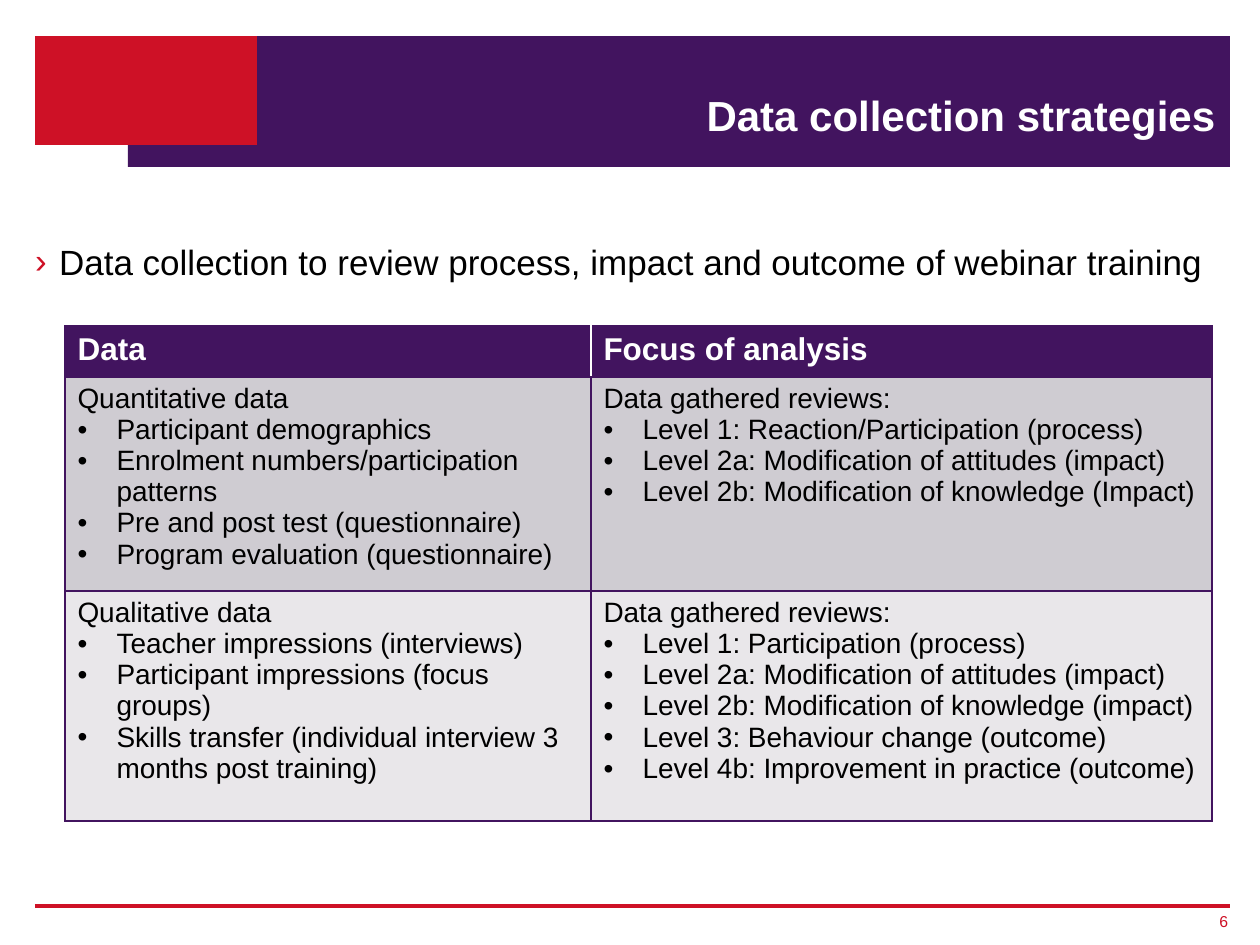
from dataclasses import dataclass

from lxml.etree import SubElement
from pptx import Presentation
from pptx.dml.color import RGBColor
from pptx.enum.shapes import MSO_CONNECTOR as Connector, MSO_SHAPE as Shape
from pptx.enum.text import MSO_ANCHOR as Anchor, PP_ALIGN as Align
from pptx.oxml.ns import qn
from pptx.util import Emu, Pt

EMU_PER_PX = 914400 / 126


def px(length):
    return Emu(round(length * EMU_PER_PX))


def assign(target, values):
    for key, value in values.items():
        setattr(target, key, value)


@dataclass(frozen=True)
class Theme:
    font: str = "Arial"
    purple: str = "42145F"
    red: str = "CE1126"
    white: str = "FFFFFF"
    black: str = "000000"
    bands: tuple = ("CFCCD2", "E9E7EA")
    title: int = 24
    lead: int = 20
    header: int = 18
    cell: int = 16
    number: int = 9


class SlideBuilder:
    def __init__(self, slide, theme):
        self.slide = slide
        self.theme = theme

    def add_text(self, paragraph, text, size, color, bold=False, **layout):
        assign(paragraph, layout)
        run = paragraph.add_run()
        run.text = text
        assign(run.font, {"name": self.theme.font, "size": Pt(size), "bold": bold})
        run.font.color.rgb = RGBColor.from_string(color)

    def bullet(self, paragraph, mark, indent, color=None):
        props = paragraph._p.get_or_add_pPr()
        props.set("marL", str(px(indent)))
        props.set("indent", str(-px(indent)))
        if color:
            SubElement(SubElement(props, qn("a:buClr")), qn("a:srgbClr"), val=color)
        SubElement(props, qn("a:buFont"), typeface=self.theme.font)
        SubElement(props, qn("a:buChar"), char=mark)

    def block(self, box, color):
        shape = self.slide.shapes.add_shape(Shape.RECTANGLE, *map(px, box))
        shape.shadow.inherit = False
        shape.fill.solid()
        shape.fill.fore_color.rgb = RGBColor.from_string(color)
        shape.line.fill.background()

    def rule(self, start, end, color, width):
        line = self.slide.shapes.add_connector(Connector.STRAIGHT, *map(px, start + end))
        line.line.color.rgb = RGBColor.from_string(color)
        line.line.width = Pt(width)
        SubElement(line._element.spPr, qn("a:effectLst"))

    def title(self, box, text):
        heading = self.slide.shapes.title
        # Bring the heading in front of the banner
        self.slide.shapes.element.append(heading.element)
        assign(heading, dict(zip(("left", "top", "width", "height"), map(px, box))))
        assign(heading.text_frame, {"vertical_anchor": Anchor.BOTTOM, "word_wrap": True})
        self.add_text(heading.text_frame.paragraphs[0], text, self.theme.title,
                      self.theme.white, True, alignment=Align.RIGHT, line_spacing=Pt(25))

    def text_frame(self, box, **frame_format):
        frame = self.slide.shapes.add_textbox(*map(px, box)).text_frame
        assign(frame, {"word_wrap": True, "margin_left": 0, **frame_format})
        return frame

    def lead(self, box, text):
        paragraph = self.text_frame(box).paragraphs[0]
        self.bullet(paragraph, "›", 24, self.theme.red)
        self.add_text(paragraph, text, self.theme.lead, self.theme.black,
                      space_after=Pt(5))

    def slide_number(self, box, text):
        frame = self.text_frame(box, margin_right=0, margin_top=0, margin_bottom=0,
                                vertical_anchor=Anchor.MIDDLE)
        self.add_text(frame.paragraphs[0], text, self.theme.number, self.theme.red,
                      alignment=Align.RIGHT)

    def cell_style(self, cell, fill, borders):
        props = cell._tc.get_or_add_tcPr()
        for side in "LRTB":
            line = SubElement(props, qn(f"a:ln{side}"), w=str(Pt(1)))
            paint = SubElement(line, qn("a:solidFill"))
            SubElement(paint, qn("a:srgbClr"), val=borders.get(side, self.theme.purple))
        cell.fill.solid()
        cell.fill.fore_color.rgb = RGBColor.from_string(fill)

    def table(self, origin, widths, heights, headers, rows):
        theme = self.theme
        size = (sum(widths), sum(heights))
        table = self.slide.shapes.add_table(
            len(heights), len(widths), *map(px, origin + size)).table
        for column, width in zip(table.columns, widths):
            column.width = px(width)
        for row, height in zip(table.rows, heights):
            row.height = px(height)

        # Header row with a white divider
        for index, (header, inner) in enumerate(zip(headers, "RL")):
            cell = table.cell(0, index)
            self.cell_style(cell, theme.purple, {inner: theme.white})
            self.add_text(cell.text_frame.paragraphs[0], header, theme.header,
                          theme.white, True)

        # Each body cell: an introduction, then bulleted items
        for r, (row, band) in enumerate(zip(rows, theme.bands), 1):
            for c, (intro, *items) in enumerate(row):
                cell = table.cell(r, c)
                self.cell_style(cell, band, {})
                frame = cell.text_frame
                self.add_text(frame.paragraphs[0], intro, theme.cell, theme.black)
                for item in items:
                    paragraph = frame.add_paragraph()
                    self.bullet(paragraph, "•", 39)
                    self.add_text(paragraph, item, theme.cell, theme.black)


HEADERS = ("Data", "Focus of analysis")
STRATEGIES = (
    (
        ("Quantitative data",
         "Participant demographics",
         "Enrolment numbers/participation patterns",
         "Pre and post test (questionnaire)",
         "Program evaluation (questionnaire)"),
        ("Data gathered reviews:",
         "Level 1: Reaction/Participation (process)",
         "Level 2a: Modification of attitudes (impact)",
         "Level 2b: Modification of knowledge (Impact)"),
    ),
    (
        ("Qualitative data",
         "Teacher impressions (interviews)",
         "Participant impressions (focus groups)",
         "Skills transfer (individual interview 3 months post training)"),
        ("Data gathered reviews:",
         "Level 1: Participation (process)",
         "Level 2a: Modification of attitudes (impact)",
         "Level 2b: Modification of knowledge (impact)",
         "Level 3: Behaviour change (outcome)",
         "Level 4b: Improvement in practice (outcome)"),
    ),
)


def main():
    deck = Presentation()
    assign(deck, {"slide_width": px(1260), "slide_height": px(945)})
    theme = Theme()
    page = SlideBuilder(deck.slides.add_slide(deck.slide_layouts[5]), theme)

    # Banner and footer rule
    page.block((128, 36, 1102, 131), theme.purple)
    page.rule((35, 906), (1230, 906), theme.red, 2.25)
    page.block((35, 36, 222, 109), theme.red)

    # Heading, lead statement and slide number
    page.title((258, 59, 970, 87), "Data collection strategies")
    page.lead((35, 234, 1193, 655),
              "Data collection to review process, impact and outcome of webinar training")
    page.slide_number((1194, 907, 34, 29), "6")

    # Data sources and what each one examines
    page.table((65, 326), (526, 621), (51, 200, 230), HEADERS, STRATEGIES)

    deck.save("out.pptx")


if __name__ == "__main__":
    main()
